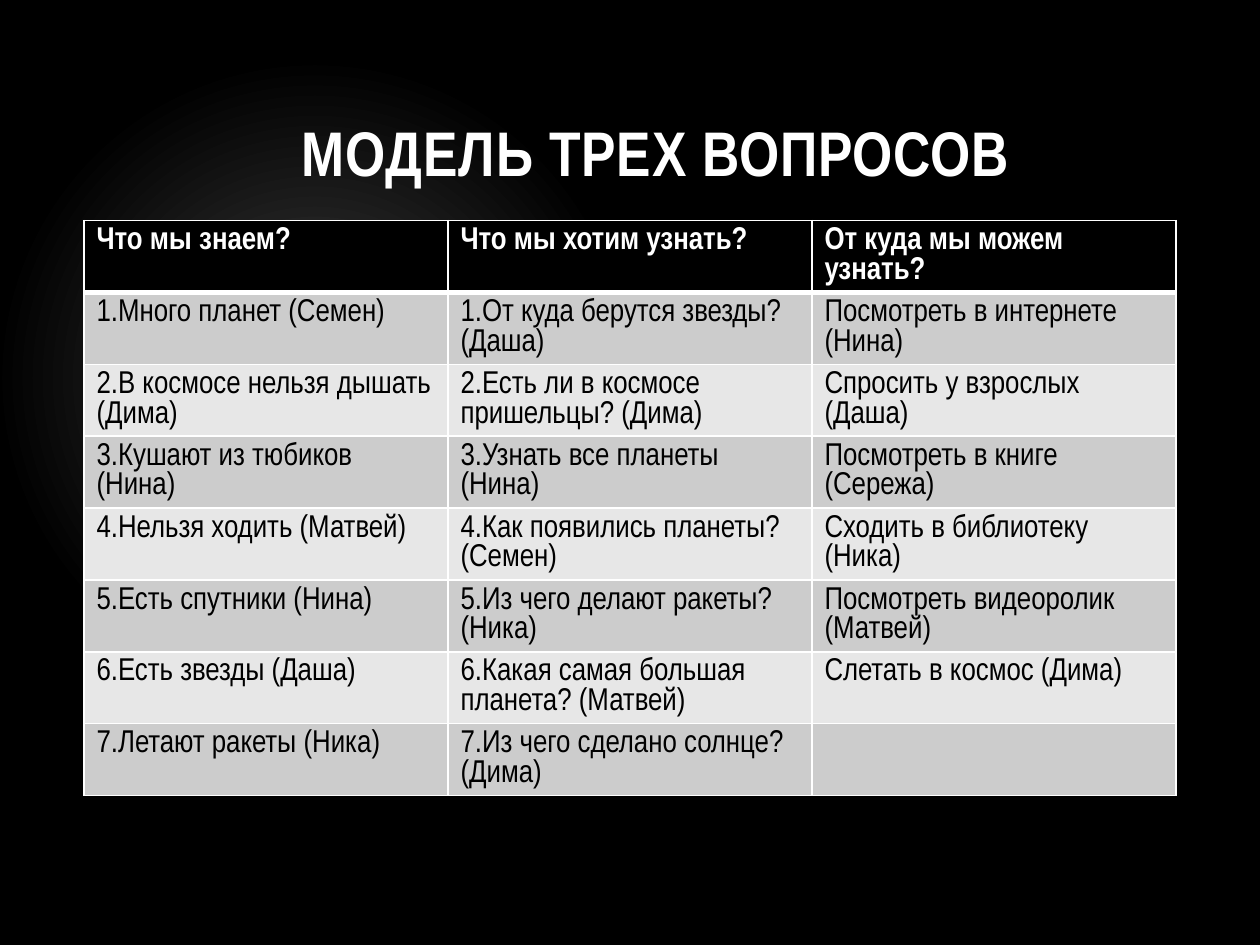
from pptx import Presentation
from pptx.dml.color import RGBColor
from pptx.enum.text import MSO_ANCHOR, PP_ALIGN
from pptx.oxml import parse_xml
from pptx.oxml.ns import nsdecls
from pptx.util import Inches, Pt

WHITE = RGBColor(0xFF, 0xFF, 0xFF)
BLACK = RGBColor(0, 0, 0)
GLOW = RGBColor(0x3F, 0x3F, 0x3F)
DARK_BAND = RGBColor(0xCC, 0xCC, 0xCC)
LIGHT_BAND = RGBColor(0xE7, 0xE7, 0xE7)

HEADINGS = ["Что мы знаем?", "Что мы хотим узнать?", "От куда мы можем узнать?"]
ANSWERS = [
    ["1.Много планет (Семен)", "1.От куда берутся звезды? (Даша)", "Посмотреть в интернете (Нина)"],
    ["2.В космосе нельзя дышать (Дима)", "2.Есть ли в космосе пришельцы? (Дима)", "Спросить у взрослых (Даша)"],
    ["3.Кушают из тюбиков (Нина)", "3.Узнать все планеты (Нина)", "Посмотреть в книге (Сережа)"],
    ["4.Нельзя ходить (Матвей)", "4.Как появились планеты? (Семен)", "Сходить в библиотеку (Ника)"],
    ["5.Есть спутники (Нина)", "5.Из чего делают ракеты? (Ника)", "Посмотреть видеоролик (Матвей)"],
    ["6.Есть звезды (Даша)", "6.Какая самая большая планета? (Матвей)", "Слетать в космос (Дима)"],
    ["7.Летают ракеты (Ника)", "7.Из чего сделано солнце? (Дима)", ""],
]


class QuestionPage:
    """Holds the style and the current slide; places are shares of the slide's size."""

    font_name = "Arial Narrow"
    title_size = Pt(36)
    text_size = Pt(18)
    title_indent = Inches(1.63)
    margin = 1 / 15
    thin, thick = Pt(1), Pt(3)

    def __init__(self, deck):
        self.deck = deck
        self.page = deck.slides.add_slide(deck.slide_layouts[5])

    def area(self, top, height):
        """Left, top, width and height of a band between the side margins."""
        wide, high = self.deck.slide_width, self.deck.slide_height
        return (int(wide * self.margin), int(high * top),
                int(wide * (1 - 2 * self.margin)), int(high * height))

    def background(self):
        stops = "".join(
            f'<a:gs pos="{share * 1000}"><a:srgbClr val="{color}"/></a:gs>'
            for share, color in [(0, GLOW), (41, BLACK), (100, BLACK)])
        self.page.element.cSld.insert(0, parse_xml(
            f'<p:bg {nsdecls("p", "a")}><p:bgPr><a:gradFill rotWithShape="1">'
            f'<a:gsLst>{stops}</a:gsLst><a:path path="circle">'
            '<a:fillToRect l="50000" t="80000" r="100000" b="100000"/></a:path>'
            '</a:gradFill><a:effectLst/></p:bgPr></p:bg>'))

    def add_run(self, para, text, size, color, bold):
        span = para.add_run()
        span.text = text
        font = span.font
        font.name, font.size, font.bold = self.font_name, size, bold
        font.color.rgb = color
        return span

    def title(self, text, top, height):
        box = self.page.shapes.title
        box.left, box.top, box.width, box.height = self.area(top, height)
        box.text_frame.vertical_anchor = MSO_ANCHOR.BOTTOM
        para = box.text_frame.paragraphs[0]
        para.alignment = PP_ALIGN.LEFT
        para._p.get_or_add_pPr().set("marL", str(self.title_indent))
        span = self.add_run(para, text, self.title_size, WHITE, True)
        span.font._element.set("spc", "50")

    def borders(self, cell, top, bottom):
        widths = {"lnL": self.thin, "lnR": self.thin, "lnT": top, "lnB": bottom}
        for side, width in widths.items():
            cell._tc.get_or_add_tcPr().append(parse_xml(
                f'<a:{side} {nsdecls("a")} w="{width}"><a:solidFill>'
                f'<a:srgbClr val="{WHITE}"/></a:solidFill></a:{side}>'))

    def table(self, rows, top, row_height):
        place = self.area(top, row_height * len(rows))
        table = self.page.shapes.add_table(len(rows), len(rows[0]), *place).table
        for row, texts in enumerate(rows):
            header = row == 0
            fill = BLACK if header else DARK_BAND if row % 2 else LIGHT_BAND
            for column, text in enumerate(texts):
                cell = table.cell(row, column)
                self.borders(cell, self.thick if row == 1 else self.thin,
                             self.thick if header else self.thin)
                cell.fill.solid()
                cell.fill.fore_color.rgb = fill
                para = cell.text_frame.paragraphs[0]
                if text:
                    self.add_run(para, text, self.text_size, WHITE if header else BLACK, header)


def main():
    deck = Presentation()
    deck.slide_width, deck.slide_height = Inches(10), Inches(7.5)
    questions = QuestionPage(deck)
    questions.background()
    questions.title("МОДЕЛЬ ТРЕХ ВОПРОСОВ", top=0.04, height=1 / 6)
    questions.table([HEADINGS, *ANSWERS], top=7 / 30, row_height=0.57 / 7.5)
    deck.save("out.pptx")


if __name__ == "__main__":
    main()
